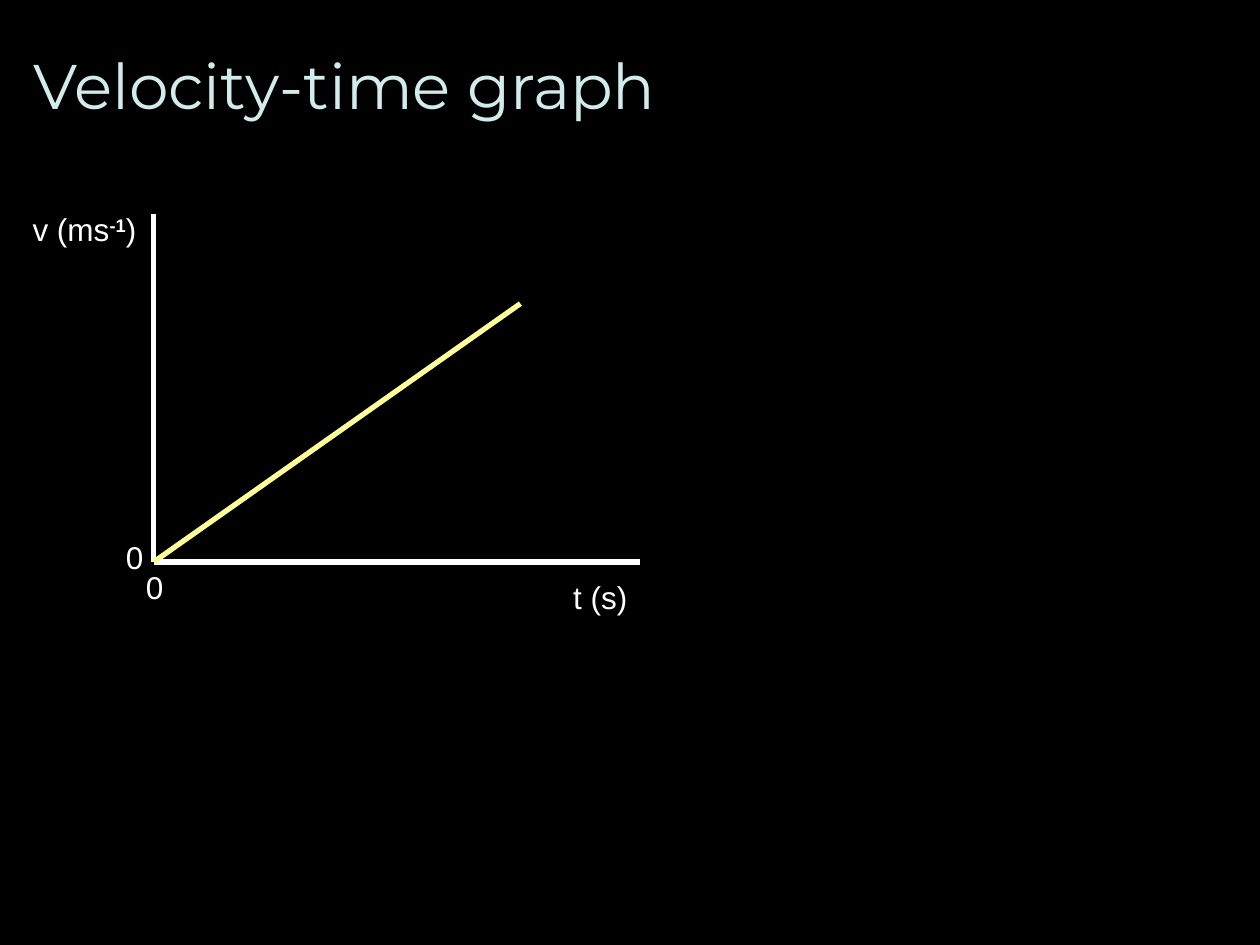
"""Build the velocity-time graph slide."""
from dataclasses import dataclass

from lxml.etree import SubElement
from pptx import Presentation
from pptx.dml.color import RGBColor
from pptx.enum.shapes import MSO_CONNECTOR
from pptx.enum.text import MSO_ANCHOR
from pptx.oxml.ns import qn
from pptx.util import Inches, Pt


@dataclass(frozen=True)
class Theme:
    """Colours, fonts and sizes of the slide."""

    background: RGBColor = RGBColor(0x00, 0x00, 0x00)
    title: RGBColor = RGBColor(0xD2, 0xEB, 0xEB)
    axis: RGBColor = RGBColor(0xFF, 0xFF, 0xFF)
    velocity: RGBColor = RGBColor(0xFF, 0xFF, 0x99)
    title_font: str = "Montserrat"
    label_font: str = "Arial"
    title_size: int = 36
    label_size: int = 18
    line_width: int = 3


THEME = Theme()
TITLE_FORMAT = {"name": THEME.title_font, "size": Pt(THEME.title_size)}
LABEL_FORMAT = {"name": THEME.label_font, "size": Pt(THEME.label_size)}
SUPERSCRIPT = "30000"


def add_text(slide, box, parts, font_format, color, anchor=MSO_ANCHOR.TOP):
    """Place one paragraph of (text, raised) parts in a box."""
    frame = slide.shapes.add_textbox(*map(Inches, box)).text_frame
    for name, value in {"word_wrap": True, "vertical_anchor": anchor}.items():
        setattr(frame, name, value)
    for text, raised in parts:
        run = frame.paragraphs[0].add_run()
        run.text = text
        for name, value in {**font_format, "bold": raised}.items():
            setattr(run.font, name, value)
        run.font.color.rgb = color
        if raised:
            run._r.get_or_add_rPr().set("baseline", SUPERSCRIPT)


def add_line(slide, start, end, color):
    """Draw a straight line between two points."""
    connector = slide.shapes.add_connector(
        MSO_CONNECTOR.STRAIGHT, *map(Inches, (*start, *end))
    )
    connector.line.width = Pt(THEME.line_width)
    connector.line.color.rgb = color
    SubElement(connector._element.spPr, qn("a:effectLst"))


def add_title(slide, box):
    """Place the slide title in its box."""
    parts = [("Velocity-time graph", False)]
    add_text(slide, box, parts, TITLE_FORMAT, THEME.title, MSO_ANCHOR.MIDDLE)


def add_graph(slide, box):
    """Draw the axes, velocity line and labels around a plot box."""
    left, top, width, height = box
    right, bottom = left + width, top + height
    origin = (left, bottom)
    lines = [
        ((left, top), origin, THEME.axis),
        (origin, (right, bottom), THEME.axis),
        (origin, (left + 2.91, bottom - 2.05), THEME.velocity),
    ]
    for start, end, color in lines:
        add_line(slide, start, end, color)

    labels = [
        (left - 0.16, bottom, 0.55, [("0", False)]),
        (left - 0.32, bottom - 0.24, 0.55, [("0", False)]),
        (right - 0.63, bottom + 0.08, 0.79, [("t (s)", False)]),
        (left - 1.06, top - 0.08, 1.38, [("v (ms", False), ("-1", True), (")", False)]),
    ]
    for x, y, label_width, parts in labels:
        add_text(slide, (x, y, label_width, 0.4), parts, LABEL_FORMAT, THEME.axis)


def main():
    """Build and save the slide."""
    presentation = Presentation()
    presentation.slide_width = Inches(10)
    presentation.slide_height = Inches(7.5)
    slide = presentation.slides.add_slide(presentation.slide_layouts[6])
    slide.background.fill.solid()
    slide.background.fill.fore_color.rgb = THEME.background
    add_title(slide, (0.17, 0.17, 7.33, 1))
    add_graph(slide, (1.22, 1.7, 3.86, 2.76))
    presentation.save("out.pptx")


if __name__ == "__main__":
    main()
